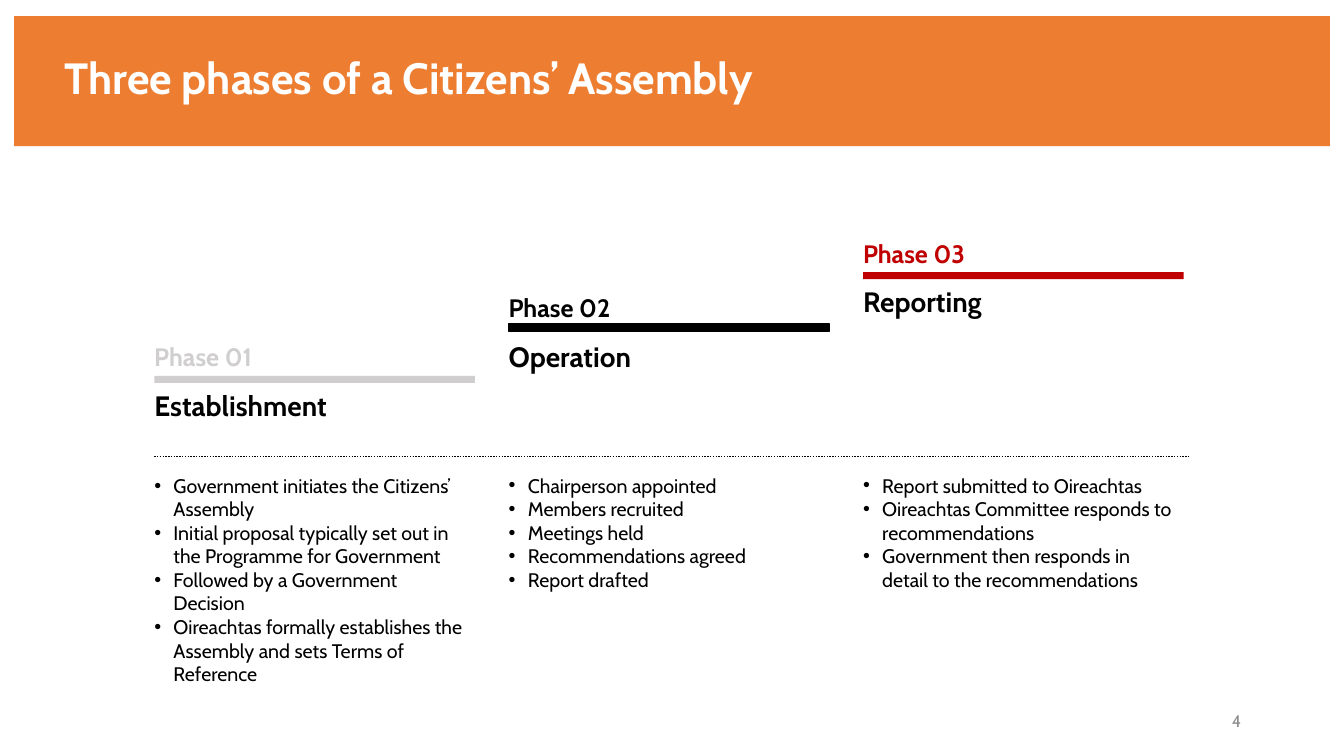
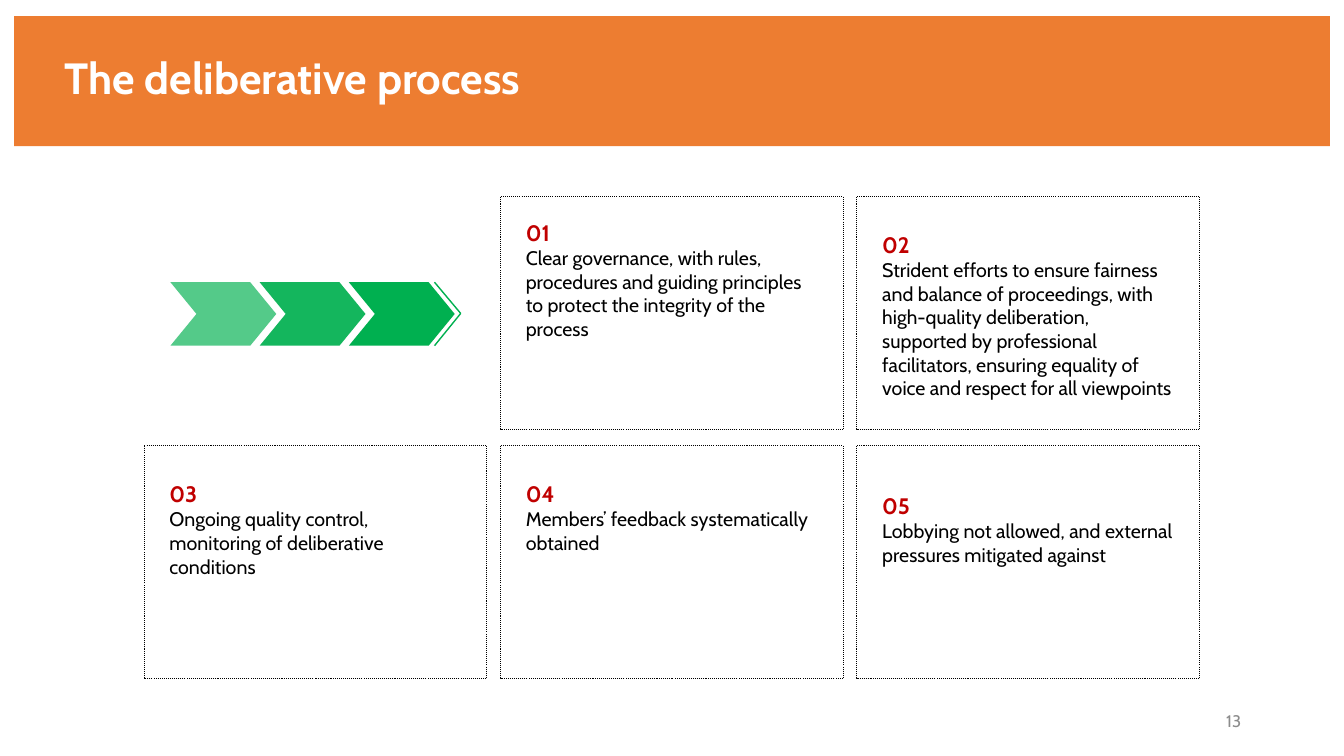
from dataclasses import dataclass

from lxml import etree
from pptx import Presentation
from pptx.dml.color import RGBColor
from pptx.enum import dml, shapes, text
from pptx.oxml import ns
from pptx.util import Inches, Pt


@dataclass(frozen=True)
class Theme:
    font: str = "Cabin"
    band: str = "ED7D31"
    white: str = "FFFFFF"
    ink: str = "000000"
    red: str = "C00000"
    pale: str = "D0CECE"
    green: str = "00B050"
    muted: str = "8C8C8C"
    title: float = 31.2
    heading: float = 20
    label: float = 18
    number: float = 16
    body: float = 14
    footer: float = 12


THEME = Theme()
PHASE_INSETS = (0, 0.02, 0.04, 0)
CARD_INSETS = (0, 0.04, 0, 0)
FOOTER_INSETS = (0.1, 0.05, 0.1, 0.05)

PHASES = [
    dict(label="Phase 01", name="Establishment", color=THEME.pale, outline=None,
         label_top=3.37, list_height=2.14, points=[
             "Government initiates the Citizens’ Assembly",
             "Initial proposal typically set out in the Programme for Government",
             "Followed by a Government Decision",
             "Oireachtas formally establishes the Assembly and sets Terms of Reference"]),
    dict(label="Phase 02", name="Operation", color=THEME.ink, outline=THEME.ink,
         label_top=2.88, list_height=1.2, points=[
             "Chairperson appointed",
             "Members recruited",
             "Meetings held",
             "Recommendations agreed",
             "Report drafted"]),
    dict(label="Phase 03", name="Reporting", color=THEME.red, outline=None,
         label_top=2.34, list_height=1.2, points=[
             "Report submitted to Oireachtas",
             "Oireachtas Committee responds to recommendations",
             "Government then responds in detail to the recommendations"]),
]

CARDS = [
    ("Clear governance, with rules, procedures and guiding principles to protect "
     "the integrity of the process", 1.25),
    ("Strident efforts to ensure fairness and balance of proceedings, with "
     "high-quality deliberation, supported by professional facilitators, ensuring "
     "equality of voice and respect for all viewpoints", 1.96),
    ("Ongoing quality control, monitoring of deliberative conditions", 1.02),
    ("Members’ feedback systematically obtained", 0.78),
    ("Lobbying not allowed, and external pressures mitigated against", 1.02),
]
CHEVRON_OPACITY = [67, 92, 100]


def place(shape, left, top, width, height):
    shape.left, shape.top = Inches(left), Inches(top)
    shape.width, shape.height = Inches(width), Inches(height)


def style_line(line, color, width, dotted=False):
    line.color.rgb = RGBColor.from_string(color)
    line.width = Pt(width)
    if dotted:
        line.dash_style = dml.MSO_LINE.ROUND_DOT


def set_frame(frame, insets):
    frame.word_wrap = True
    frame.auto_size = text.MSO_AUTO_SIZE.NONE
    frame.vertical_anchor = text.MSO_ANCHOR.MIDDLE
    frame.margin_left, frame.margin_top, frame.margin_right, frame.margin_bottom = map(
        Inches, insets)


def style_text(para, size, color, bold=False):
    for span in para.runs:
        span.font.name = THEME.font
        span.font.size = Pt(size)
        span.font.bold = bold
        span.font.color.rgb = RGBColor.from_string(color)


def add_text(page, area, lines, insets):
    box = page.shapes.add_textbox(*map(Inches, area))
    set_frame(box.text_frame, insets)
    box.text_frame.text = "\n".join(line[0] for line in lines)
    for para, (_, size, color, bold) in zip(box.text_frame.paragraphs, lines):
        style_text(para, size, color, bold)
    return box


def add_block(page, kind, area, fill=None, outline=None, width=1, dotted=False):
    block = page.shapes.add_shape(kind, *map(Inches, area))
    block.shadow.inherit = False
    if fill:
        block.fill.solid()
        block.fill.fore_color.rgb = RGBColor.from_string(fill)
    else:
        block.fill.background()
    if outline:
        style_line(block.line, outline, width, dotted)
    else:
        block.line.fill.background()
    return block


def add_page(deck, layout_name, title, number):
    page = deck.slides.add_slide(deck.slide_layouts.get_by_name(layout_name))
    band = add_block(page, shapes.MSO_SHAPE.RECTANGLE, (0.14, 0.16, 13.05, 1.29), THEME.band)
    heading = page.shapes.title
    band.element.addnext(heading.element)
    place(heading, 0.54, 0.45, 11.02, 0.7)
    set_frame(heading.text_frame, FOOTER_INSETS)
    heading.text_frame.text = title
    para = heading.text_frame.paragraphs[0]
    para.alignment = text.PP_ALIGN.LEFT
    para.line_spacing = 0.9
    style_text(para, THEME.title, THEME.white, True)
    footer = add_text(page, (11.41, 6.95, 1, 0.4),
                      [(str(number), THEME.footer, THEME.muted, False)], FOOTER_INSETS)
    footer.text_frame.paragraphs[0].alignment = text.PP_ALIGN.RIGHT
    return page


def fill_list(body, points):
    set_frame(body.text_frame, PHASE_INSETS)
    body.text_frame.text = "\n".join(points)
    for para in body.text_frame.paragraphs:
        props = para._p.get_or_add_pPr()
        props.set("marL", str(Inches(0.19)))
        props.set("indent", str(-Inches(0.19)))
        etree.SubElement(props, ns.qn("a:buFont")).set("typeface", "Arial")
        etree.SubElement(props, ns.qn("a:buChar")).set("char", "•")
        para.alignment = text.PP_ALIGN.LEFT
        para.space_before = Pt(0)
        style_text(para, THEME.body, THEME.ink)


def build_phases(deck):
    page = add_page(deck, "Comparison", "Three phases of a Citizens’ Assembly", 4)
    divider = page.shapes.add_connector(
        shapes.MSO_CONNECTOR.STRAIGHT, *map(Inches, (1.53, 4.53, 11.8, 4.53)))
    style_line(divider.line, THEME.ink, 1, True)
    etree.SubElement(divider.element.spPr, ns.qn("a:effectLst"))

    *bodies, spare = [holder for holder in page.placeholders
                      if holder.placeholder_format.idx > 0]
    spare.element.getparent().remove(spare.element)
    for index, (phase, body) in enumerate(zip(PHASES, bodies)):
        left = 1.53 + 3.515 * index
        top = phase["label_top"]
        add_block(page, shapes.MSO_SHAPE.RECTANGLE, (left, 3.73 - 0.515 * index, 3.18, 0.07),
                  phase["color"], phase["outline"])
        add_text(page, (left, top, 1.47, 0.32),
                 [(phase["label"], THEME.label, phase["color"], True)], PHASE_INSETS)
        add_text(page, (left, top + 0.46, 3.18, 0.36),
                 [(phase["name"], THEME.heading, THEME.ink, True)], PHASE_INSETS)
        place(body, left, 4.67, 3.18, phase["list_height"])
        fill_list(body, phase["points"])


def build_process(deck):
    page = add_page(deck, "Title Only", "The deliberative process", 13)
    for number, (statement, height) in enumerate(CARDS, 1):
        row, column = divmod(number, 3)
        left, top = 1.43 + 3.535 * column, 1.95 + 2.47 * row
        add_block(page, shapes.MSO_SHAPE.RECTANGLE, (left, top, 3.4, 2.31),
                  outline=THEME.ink, width=0.75, dotted=True)
        add_text(page, (left + 0.25, top + (0.18, 0.3)[row], 2.89, height),
                 [(f"{number:02}", THEME.number, THEME.red, True),
                  (statement, THEME.body, THEME.ink, False)], CARD_INSETS)

    for index, opacity in enumerate(CHEVRON_OPACITY):
        chevron = add_block(page, shapes.MSO_SHAPE.CHEVRON,
                            (1.69 + 0.885 * index, 2.8, 1.05, 0.63), THEME.green)
        chevron.adjustments[0] = 0.41
        if opacity < 100:
            color = chevron.element.spPr.find(".//" + ns.qn("a:srgbClr"))
            etree.SubElement(color, ns.qn("a:alpha")).set("val", str(opacity * 1000))

    builder = page.shapes.build_freeform(Inches(4.31), Inches(2.8))
    builder.add_line_segments([(Inches(4.57), Inches(3.11)), (Inches(4.31), Inches(3.43))],
                              close=False)
    tip = builder.convert_to_shape()
    tip.shadow.inherit = False
    tip.fill.background()
    style_line(tip.line, THEME.green, 1)


def main():
    deck = Presentation()
    deck.slide_width, deck.slide_height = Inches(13.33), Inches(7.5)
    build_phases(deck)
    build_process(deck)
    deck.save("out.pptx")


if __name__ == "__main__":
    main()
